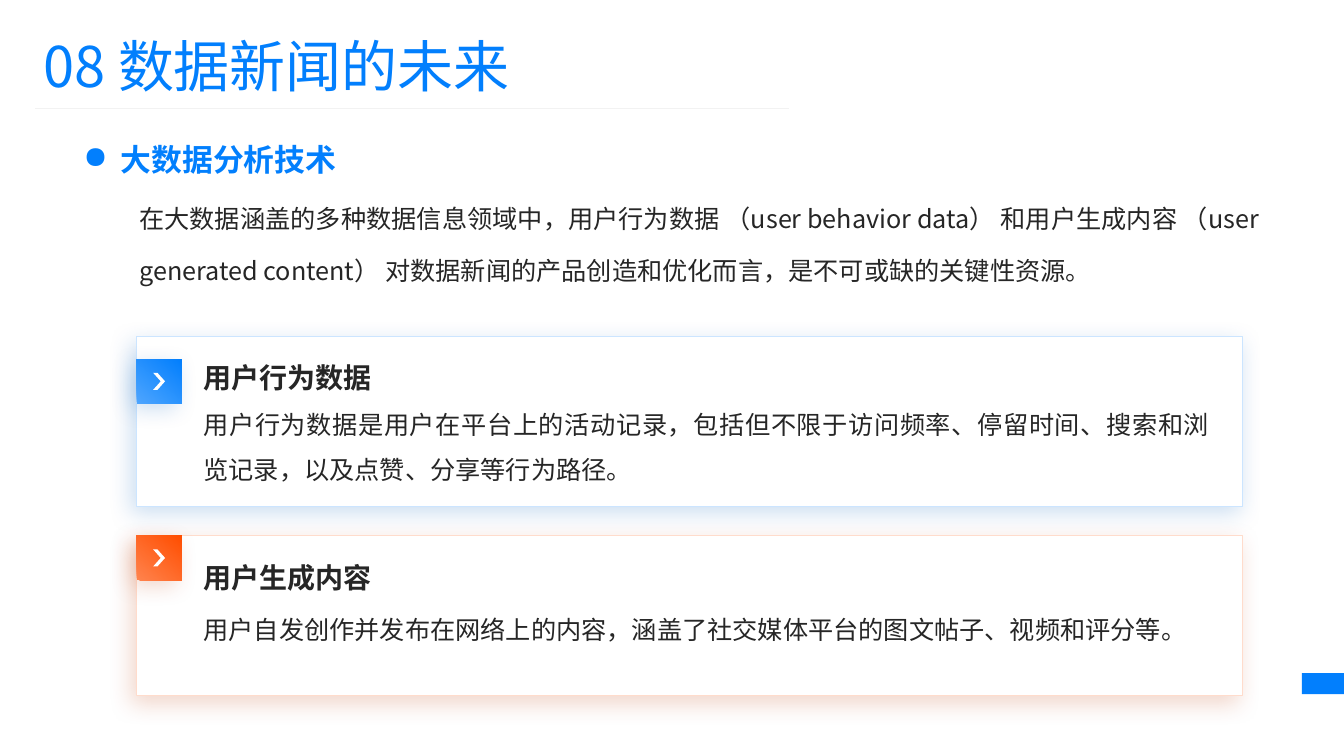
"""Build the slide on the future of data journalism."""
from lxml import etree
from pptx import Presentation
from pptx.dml.color import RGBColor
from pptx.enum import shapes, text
from pptx.oxml import ns
from pptx.util import Cm, Pt

FONT = "Noto Sans CJK SC"
BLUE, DARK, WHITE = "027FFD", "262626", "FFFFFF"
TITLE = "08 数据新闻的未来"
HEADING = "大数据分析技术"
INTRO = ("在大数据涵盖的多种数据信息领域中，用户行为数据 （user behavior data） 和用户生成内容 "
         "（user generated content） 对数据新闻的产品创造和优化而言，是不可或缺的关键性资源。")
CARDS = [
    dict(head="用户行为数据",
         body="用户行为数据是用户在平台上的活动记录，包括但不限于访问频率、停留时间、搜索和浏览记录，以及点赞、分享等行为路径。",
         top=8.48, height=4.27, head_top=8.81, body_top=9.93, icon_top=9.04,
         line="CCE5FF", shadow="015FBE", grad=("4EA5FE", BLUE)),
    dict(head="用户生成内容",
         body="用户自发创作并发布在网络上的内容，涵盖了社交媒体平台的图文帖子、视频和评分等。",
         top=13.49, height=4.04, head_top=13.84, body_top=15.11, icon_top=13.49,
         line="FFDCCC", shadow="C03A00", grad=("FF834D", "FF4E01")),
]
CARD_LEFT, CARD_WIDTH = 3.43, 27.89
TEXT_LEFT, TEXT_WIDTH = 5.13, 25.37
ICON_LEFT, ICON_W, ICON_H = 3.45, 1.12, 1.14
ARROW_W, ARROW_H = 0.3, 0.43


def rgb(value):
    return RGBColor.from_string(value)


def add_xml(parent, tag, **attrs):
    return etree.SubElement(parent, ns.qn(tag), attrs)


def write(sp, content, size, color, bold=False, align=text.PP_ALIGN.LEFT,
          anchor=text.MSO_ANCHOR.TOP, spacing=None, inset=0, bullet=None):
    tf = sp.text_frame
    tf.word_wrap = True
    tf.vertical_anchor = anchor
    if inset is not None:
        tf.margin_left = tf.margin_right = tf.margin_top = tf.margin_bottom = inset
    p = tf.paragraphs[0]
    p.text = content
    p.alignment = align
    p.line_spacing = spacing
    if bullet:
        pPr = p._p.get_or_add_pPr()
        pPr.set("marL", str(Cm(0.95)))
        pPr.set("indent", str(Cm(-0.95)))
        add_xml(pPr, "a:buChar", char=bullet)
    font = p.font
    font.size, font.bold, font.name = Pt(size), bold, FONT
    font.color.rgb = rgb(color)
    add_xml(font._element, "a:ea", typeface=FONT)


def add_text(s, box, *args, **kwargs):
    write(s.shapes.add_textbox(*map(Cm, box)), *args, **kwargs)


def add_shape(s, kind, box, fill=None, adj=None):
    sp = s.shapes.add_shape(kind, *map(Cm, box))
    sp.shadow.inherit = False
    sp.line.fill.background()
    if fill:
        sp.fill.solid()
        sp.fill.fore_color.rgb = rgb(fill)
    if adj is not None:
        sp.adjustments[0] = adj
    return sp


def add_shadow(sp, color):
    effects = sp._element.spPr.find(ns.qn("a:effectLst"))
    shadow = add_xml(effects, "a:outerShdw", blurRad=str(Pt(16)), dist=str(Pt(6)),
                     dir="8100000", algn="tr", rotWithShape="0")
    add_xml(add_xml(shadow, "a:srgbClr", val=color), "a:alpha", val="20000")


def add_card(s, card):
    sp = add_shape(s, shapes.MSO_SHAPE.ROUND_1_RECTANGLE,
                   (CARD_LEFT, card["top"], CARD_WIDTH, card["height"]), WHITE, 0)
    sp.line.color.rgb = rgb(card["line"])
    sp.line.width = Pt(0.5)
    add_shadow(sp, card["shadow"])
    add_text(s, (TEXT_LEFT, card["head_top"], TEXT_WIDTH, 1.12), card["head"], 20, DARK,
             bold=True, anchor=text.MSO_ANCHOR.BOTTOM)
    add_text(s, (TEXT_LEFT, card["body_top"], TEXT_WIDTH, 1.45), card["body"], 18, DARK,
             align=text.PP_ALIGN.JUSTIFY, spacing=1.5)


def add_icon(s, card):
    top = card["icon_top"]
    sp = add_shape(s, shapes.MSO_SHAPE.ROUNDED_RECTANGLE, (ICON_LEFT, top, ICON_W, ICON_H), adj=0)
    sp.rotation = 90
    sp.fill.gradient()
    sp.fill.gradient_angle = 140
    for stop, color in zip(sp.fill.gradient_stops, card["grad"]):
        stop.color.rgb = rgb(color)
    add_shadow(sp, card["shadow"])
    add_shape(s, shapes.MSO_SHAPE.CHEVRON,
              (ICON_LEFT + (ICON_W - ARROW_W) / 2, top + (ICON_H - ARROW_H) / 2,
               ARROW_W, ARROW_H), WHITE, 0.64)


def main():
    prs = Presentation()
    prs.slide_width, prs.slide_height = Cm(33.87), Cm(19.05)
    s = prs.slides.add_slide(prs.slide_layouts[5])

    add_shape(s, shapes.MSO_SHAPE.RECTANGLE, (32.81, 16.96, 1.06, 0.53), BLUE)
    title = s.shapes.title
    title.left, title.top, title.width, title.height = map(Cm, (0.84, 0.66, 19.51, 1.96))
    write(title, TITLE, 40, BLUE, inset=None)
    title.text_frame.auto_size = text.MSO_AUTO_SIZE.SHAPE_TO_FIT_TEXT

    rule = s.shapes.add_connector(shapes.MSO_CONNECTOR.STRAIGHT,
                                  *map(Cm, (0.89, 2.74, 19.89, 2.74)))
    rule.line.color.rgb = rgb("F2F2F2")
    rule.line.width = Pt(0.5)
    add_xml(rule._element.spPr, "a:effectLst")

    add_text(s, (2.01, 3.38, 6.55, 1.09), HEADING, 22, BLUE, bold=True,
             align=text.PP_ALIGN.CENTER, anchor=text.MSO_ANCHOR.BOTTOM, bullet="●")
    add_text(s, (3.51, 4.6, 28.22, 3.15), INTRO, 18, DARK,
             align=text.PP_ALIGN.JUSTIFY, spacing=1.7)
    for card in CARDS:
        add_card(s, card)
    for card in CARDS:
        add_icon(s, card)
    prs.save("out.pptx")


if __name__ == "__main__":
    main()
